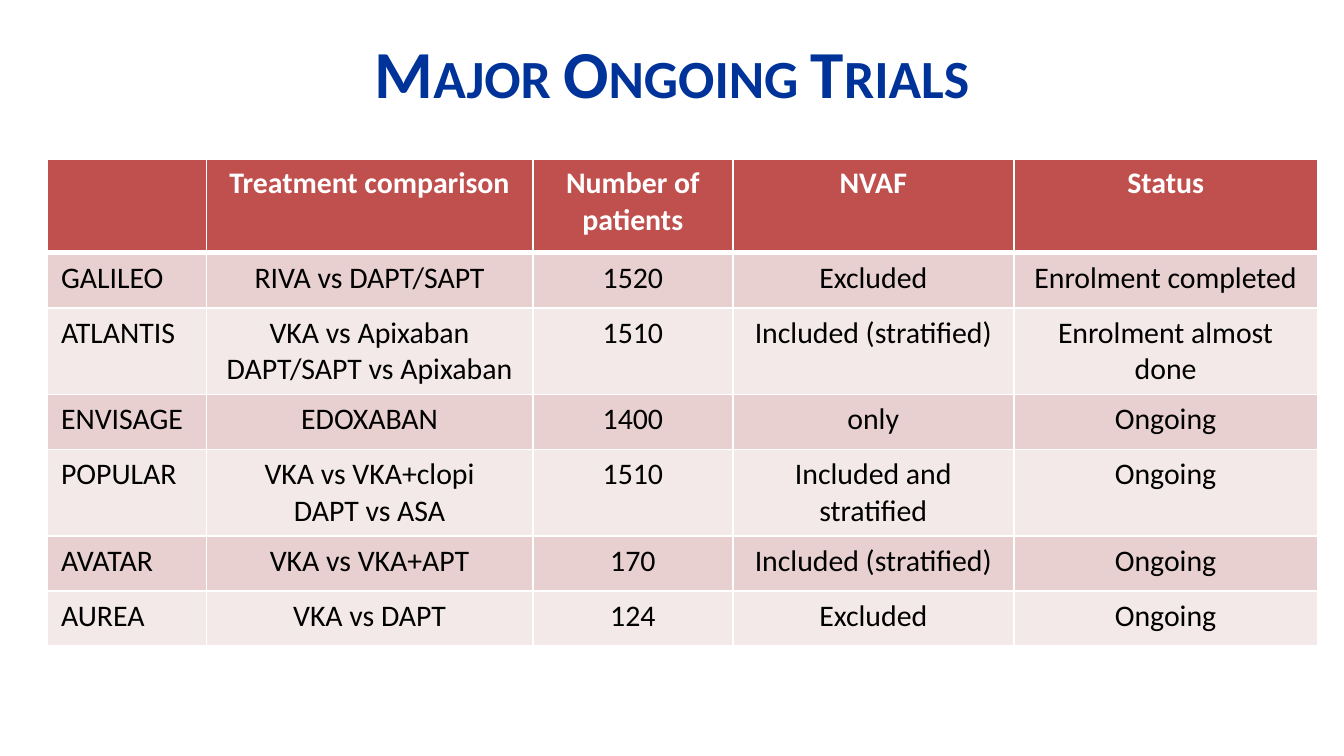
from lxml.etree import SubElement
from pptx import Presentation
from pptx.dml.color import RGBColor
from pptx.enum.text import MSO_ANCHOR, PP_ALIGN
from pptx.oxml.ns import qn
from pptx.util import Cm, Pt

COLS = [3, 6.17, 3.78, 5.31, 5.74]
ROWS = [
    ["", "Treatment comparison", "Number of patients", "NVAF", "Status"],
    ["GALILEO", "RIVA vs DAPT/SAPT", "1520", "Excluded", "Enrolment completed"],
    ["ATLANTIS", "VKA vs Apixaban\nDAPT/SAPT vs Apixaban", "1510",
     "Included (stratified)", "Enrolment almost done"],
    ["ENVISAGE", "EDOXABAN", "1400", "only", "Ongoing"],
    ["POPULAR", "VKA vs VKA+clopi\nDAPT vs ASA", "1510",
     "Included and stratified", "Ongoing"],
    ["AVATAR", "VKA vs VKA+APT", "170", "Included (stratified)", "Ongoing"],
    ["AUREA", "VKA vs DAPT", "124", "Excluded", "Ongoing"],
]


def color(code):
    return RGBColor.from_string(code)


class Deck:
    font = "Calibri"
    blue = "003399"
    red = "C0504D"
    white = "FFFFFF"
    black = "000000"
    bands = ["F4E9E9", "E8D0D0"]

    def __init__(self):
        self.file = Presentation()
        self.file.slide_width = Cm(25.4)
        self.file.slide_height = Cm(14.29)
        self.slide = self.file.slides.add_slide(self.file.slide_layouts[5])

    def add_text(self, para, text, size, code, bold, align):
        para.alignment = align
        run = para.add_run()
        run.text = text
        run.font.name = self.font
        run.font.size = Pt(size)
        run.font.bold = bold
        run.font.color.rgb = color(code)
        return run

    def title(self, text):
        shape = self.slide.shapes.title
        shape.left, shape.top = Cm(1.27), Cm(0.15)
        shape.width, shape.height = Cm(22.86), Cm(2.39)
        frame = shape.text_frame
        frame.vertical_anchor = MSO_ANCHOR.MIDDLE
        run = self.add_text(frame.paragraphs[0], text, 36, self.blue, True,
                            PP_ALIGN.CENTER)
        run._r.get_or_add_rPr().set("cap", "small")

    def border(self, cell, side, width):
        props = cell._tc.get_or_add_tcPr()
        line = SubElement(props, qn("a:ln" + side), w=str(Pt(width)))
        fill = SubElement(line, qn("a:solidFill"))
        SubElement(fill, qn("a:srgbClr"), val=self.white)

    def cell(self, cell, text, row, col):
        head = row == 0
        heavy = {(0, "B"), (1, "T")}
        for side in "LRTB":
            self.border(cell, side, 3 if (row, side) in heavy else 1)
        cell.fill.solid()
        cell.fill.fore_color.rgb = color(self.red if head else self.bands[row % 2])
        if not text:
            return
        align = PP_ALIGN.CENTER if col else PP_ALIGN.LEFT
        frame = cell.text_frame
        for i, line in enumerate(text.split("\n")):
            para = frame.add_paragraph() if i else frame.paragraphs[0]
            self.add_text(para, line, 16, self.white if head else self.black,
                          head, align)

    def table(self, rows, cols, left, top):
        highs = [1.78] + [1.6 if "\n" in row[1] else 1.04 for row in rows[1:]]
        grid = self.slide.shapes.add_table(
            len(rows), len(cols), Cm(left), Cm(top),
            Cm(sum(cols)), Cm(sum(highs))).table
        for col, width in zip(grid.columns, cols):
            col.width = Cm(width)
        for r, (row, high) in enumerate(zip(rows, highs)):
            grid.rows[r].height = Cm(high)
            for c, text in enumerate(row):
                self.cell(grid.cell(r, c), text, r, c)


def main():
    deck = Deck()
    deck.title("Major Ongoing Trials")
    deck.table(ROWS, COLS, 0.9, 3)
    deck.file.save("out.pptx")


if __name__ == "__main__":
    main()
